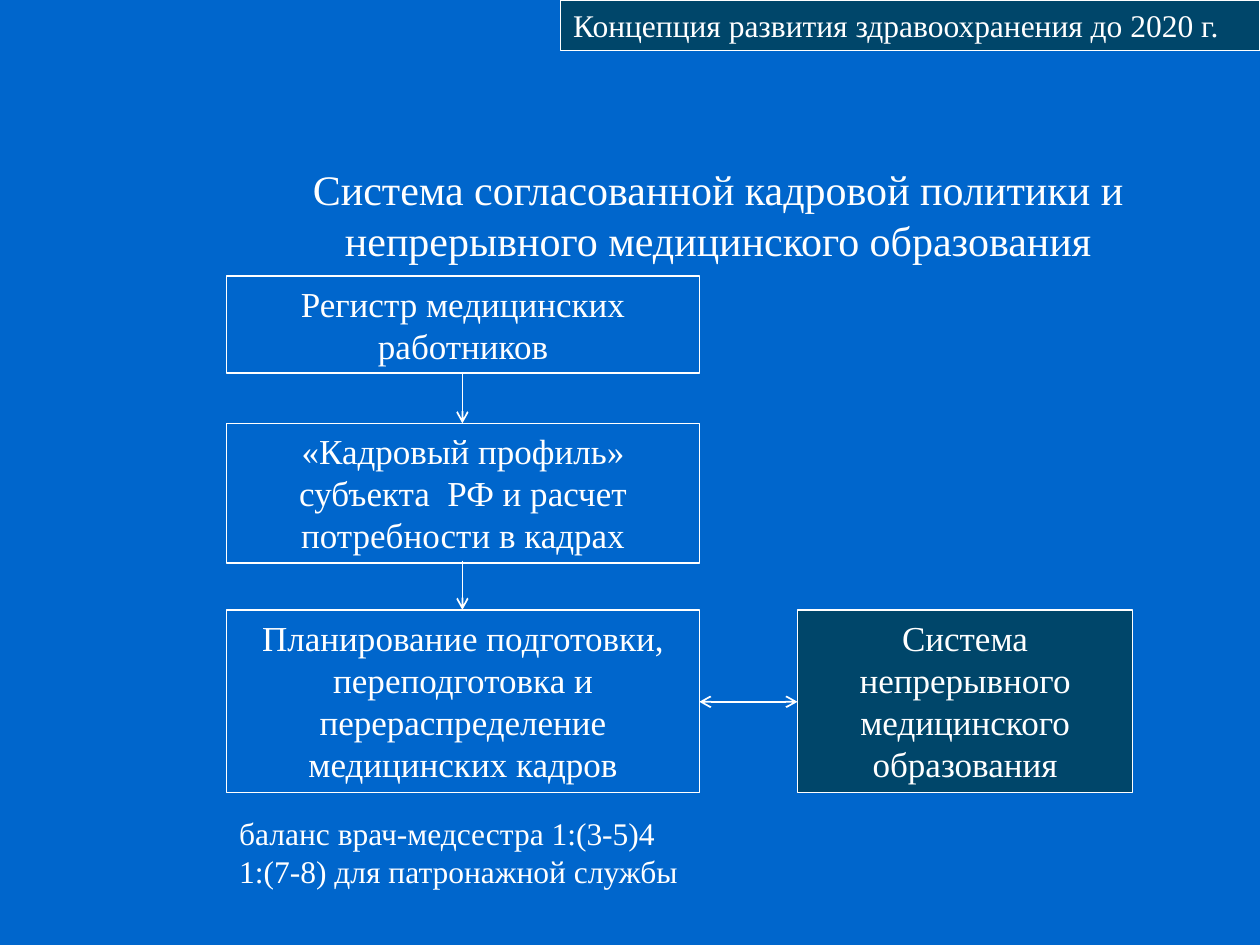
import lxml.etree
import pptx
import pptx.dml.color
import pptx.enum.shapes
import pptx.enum.text
import pptx.oxml.ns
import pptx.util
from pptx.util import Inches

WHITE, BLUE, TEAL = "FFFFFF", "0066CC", "00466A"
LEFT, CENTER = pptx.enum.text.PP_ALIGN.LEFT, pptx.enum.text.PP_ALIGN.CENTER


def rgb(value):
    return pptx.dml.color.RGBColor.from_string(value)


def write(sp, lines, size, align):
    """Fill a shape with one white paragraph per line."""
    tf = sp.text_frame
    tf.word_wrap = True
    tf.auto_size = pptx.enum.text.MSO_AUTO_SIZE.NONE
    tf.vertical_anchor = pptx.enum.text.MSO_ANCHOR.TOP
    for i, line in enumerate(lines):
        p = tf.add_paragraph() if i else tf.paragraphs[0]
        p.alignment = align
        r = p.add_run()
        r.text = line
        r.font.size = pptx.util.Pt(size)
        r.font.name = "Times New Roman"
        r.font.color.rgb = rgb(WHITE)


prs = pptx.Presentation()
prs.slide_width, prs.slide_height = Inches(10), Inches(7.5)
s = prs.slides.add_slide(prs.slide_layouts[5])
s.background.fill.solid()
s.background.fill.fore_color.rgb = rgb(BLUE)

title = s.shapes.title
title.left, title.top = Inches(2.03), Inches(1.25)
title.width, title.height = Inches(7.34), Inches(0.91)
write(title, ["Система согласованной кадровой политики и непрерывного медицинского образования"],
      24, CENTER)

# Left, top, width, height, fill, text size, alignment, text
boxes = [
    (1.8, 2.19, 3.75, 0.77, None, 20, CENTER, "Регистр медицинских работников"),
    (1.8, 3.36, 3.75, 1.11, None, 20, CENTER,
     "«Кадровый профиль» субъекта  РФ и расчет потребности в кадрах"),
    (1.8, 4.84, 3.75, 1.45, None, 20, CENTER,
     "Планирование подготовки, переподготовка и перераспределение медицинских кадров"),
    (6.33, 4.84, 2.66, 1.45, TEAL, 20, CENTER,
     "Система непрерывного медицинского образования"),
    (4.45, 0, 5.55, 0.4, TEAL, 18, LEFT, "Концепция развития здравоохранения до 2020 г."),
]
for left, top, width, height, fill, size, align, text in boxes:
    sp = s.shapes.add_shape(pptx.enum.shapes.MSO_SHAPE.RECTANGLE,
                            Inches(left), Inches(top), Inches(width), Inches(height))
    sp.shadow.inherit = False
    if fill:
        sp.fill.solid()
        sp.fill.fore_color.rgb = rgb(fill)
    else:
        sp.fill.background()
    sp.line.color.rgb = rgb(WHITE)
    sp.line.width = pptx.util.Pt(0.75)
    write(sp, [text], size, align)

# Start, end, arrowheads
arrows = [
    ((3.67, 2.96), (3.67, 3.36), ["tailEnd"]),
    ((3.67, 4.45), (3.67, 4.84), ["tailEnd"]),
    ((5.55, 5.57), (6.33, 5.57), ["headEnd", "tailEnd"]),
]
for start, end, heads in arrows:
    arrow = s.shapes.add_connector(pptx.enum.shapes.MSO_CONNECTOR.STRAIGHT,
                                   *map(Inches, start + end))
    arrow.line.color.rgb = rgb(WHITE)
    arrow.line.width = pptx.util.Pt(1)
    sp_pr = arrow._element.spPr
    for head in heads:
        lxml.etree.SubElement(sp_pr.get_or_add_ln(), pptx.oxml.ns.qn("a:" + head), type="arrow")
    lxml.etree.SubElement(sp_pr, pptx.oxml.ns.qn("a:effectLst"))

note = s.shapes.add_textbox(Inches(1.8), Inches(6.41), Inches(3.98), Inches(0.71))
write(note, ["баланс врач-медсестра 1:(3-5)4", "1:(7-8) для патронажной службы"], 18, LEFT)

prs.save("out.pptx")
